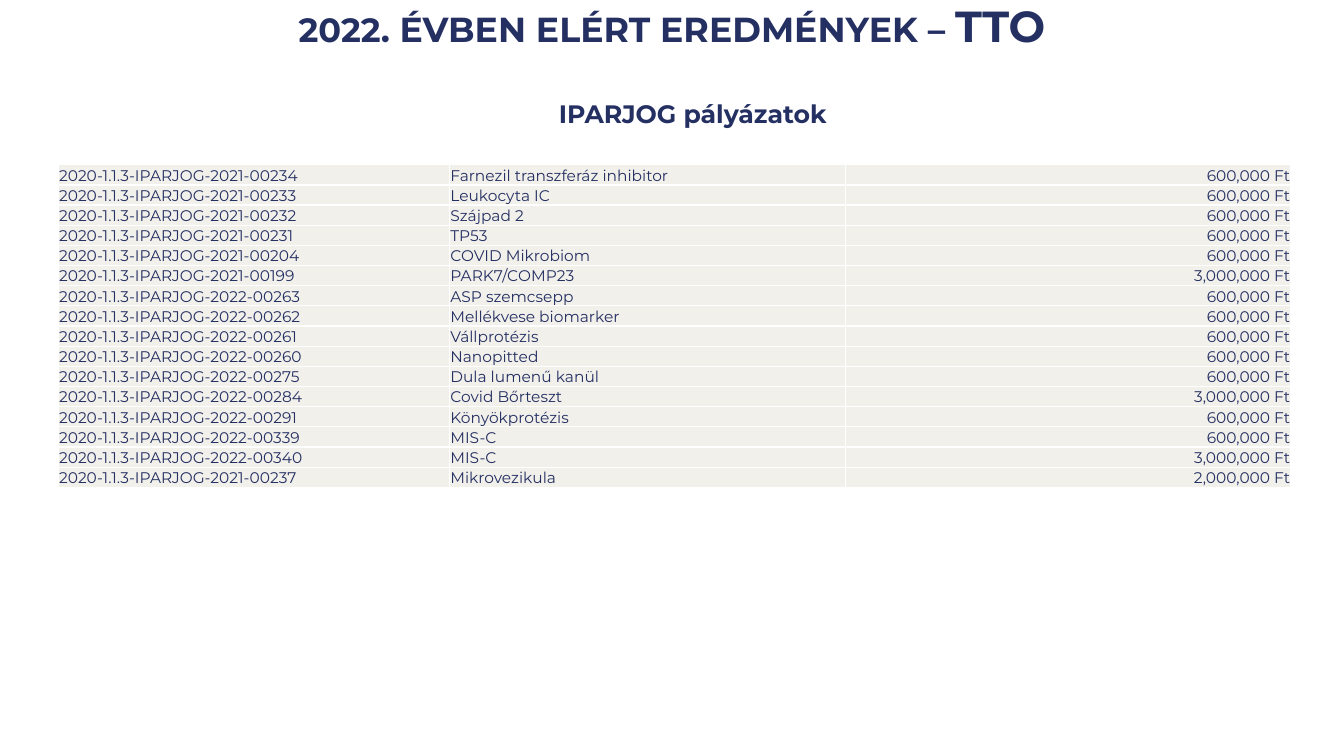
from dataclasses import dataclass

from lxml import etree
from pptx import Presentation
from pptx.dml.color import RGBColor
from pptx.enum.text import MSO_ANCHOR, MSO_AUTO_SIZE, PP_ALIGN
from pptx.oxml.ns import qn
from pptx.util import Pt

LEFT, CENTER, RIGHT = PP_ALIGN.LEFT, PP_ALIGN.CENTER, PP_ALIGN.RIGHT
BOTTOM = MSO_ANCHOR.BOTTOM
GROW = MSO_AUTO_SIZE.SHAPE_TO_FIT_TEXT
BLANK_LAYOUT = 6


@dataclass(frozen=True)
class Theme:
    font: str = "Montserrat"
    text: str = "242F62"
    cell: str = "F2F0EB"
    border: str = "FFFFFF"
    year_size: int = 30
    title_size: int = 31
    subtitle_size: int = 18
    table_size: int = 11
    border_width: int = 1


GRANTS = [
    ("2021-00234", "Farnezil transzferáz inhibitor", 600_000),
    ("2021-00233", "Leukocyta IC", 600_000),
    ("2021-00232", "Szájpad 2", 600_000),
    ("2021-00231", "TP53", 600_000),
    ("2021-00204", "COVID Mikrobiom", 600_000),
    ("2021-00199", "PARK7/COMP23", 3_000_000),
    ("2022-00263", "ASP szemcsepp", 600_000),
    ("2022-00262", "Mellékvese biomarker", 600_000),
    ("2022-00261", "Vállprotézis", 600_000),
    ("2022-00260", "Nanopitted", 600_000),
    ("2022-00275", "Dula lumenű kanül", 600_000),
    ("2022-00284", "Covid Bőrteszt", 3_000_000),
    ("2022-00291", "Könyökprotézis", 600_000),
    ("2022-00339", "MIS-C", 600_000),
    ("2022-00340", "MIS-C", 3_000_000),
    ("2021-00237", "Mikrovezikula", 2_000_000),
]


class SlideBuilder:
    def __init__(self, slide, theme):
        self.slide = slide
        self.theme = theme

    def style_run(self, run, size, bold=False):
        run.font.name = self.theme.font
        run.font.size = Pt(size)
        run.font.bold = bold
        run.font.color.rgb = RGBColor.from_string(self.theme.text)

    def heading(self, left, top, width, height, parts, wrap=True, small_caps=False):
        """Add a centred bold line made of (text, size) parts."""
        box = self.slide.shapes.add_textbox(Pt(left), Pt(top), Pt(width), Pt(height))
        box.text_frame.word_wrap = wrap
        paragraph = box.text_frame.paragraphs[0]
        paragraph.alignment = CENTER
        for text, size in parts:
            run = paragraph.add_run()
            run.text = text
            self.style_run(run, size, bold=True)
            if small_caps:
                run.font._element.set("cap", "small")
        return box

    def cell_borders(self, cell):
        properties = cell._tc.get_or_add_tcPr()
        for side in ("a:lnL", "a:lnR", "a:lnT", "a:lnB"):
            line = etree.SubElement(properties, qn(side), w=str(Pt(self.theme.border_width)))
            fill = etree.SubElement(line, qn("a:solidFill"))
            etree.SubElement(fill, qn("a:srgbClr"), val=self.theme.border)

    def table(self, left, top, column_widths, row_height, rows, alignments):
        frame = self.slide.shapes.add_table(
            len(rows), len(column_widths), Pt(left), Pt(top),
            Pt(sum(column_widths)), Pt(row_height * len(rows)))
        table = frame.table
        table.first_row = table.horz_banding = False
        for column, width in zip(table.columns, column_widths):
            column.width = Pt(width)
        for row, values in zip(table.rows, rows):
            row.height = Pt(row_height)
            for cell, value, alignment in zip(row.cells, values, alignments):
                self.table_cell(cell, value, alignment)

    def table_cell(self, cell, value, alignment):
        cell.margin_left = cell.margin_right = cell.margin_top = Pt(0.5)
        cell.margin_bottom = Pt(0)
        cell.vertical_anchor = BOTTOM
        self.cell_borders(cell)
        cell.fill.solid()
        cell.fill.fore_color.rgb = RGBColor.from_string(self.theme.cell)
        paragraph = cell.text_frame.paragraphs[0]
        paragraph.text = value
        paragraph.alignment = alignment
        self.style_run(paragraph.runs[0], self.theme.table_size)


def main():
    presentation = Presentation()
    presentation.slide_width, presentation.slide_height = Pt(960), Pt(540)
    theme = Theme()
    slide = presentation.slides.add_slide(presentation.slide_layouts[BLANK_LAYOUT])
    builder = SlideBuilder(slide, theme)

    # Title and subtitle
    title = builder.heading(
        0, 0, 960, 39,
        [("2022", theme.year_size), (". évben elért eredmények – TTO", theme.title_size)],
        small_caps=True)
    title.text_frame.paragraphs[0].line_spacing = 0.9
    subtitle = builder.heading(
        390, 66.4, 210, 29, [("IPARJOG pályázatok", theme.subtitle_size)], wrap=False)
    subtitle.text_frame.auto_size = GROW

    # Grants: identifier, project and amount
    rows = [(f"2020-1.1.3-IPARJOG-{number}", project, f"{amount:,} Ft")
            for number, project, amount in GRANTS]
    builder.table(41.7, 117.7, (279.5, 283, 318), 14.4, rows, (LEFT, LEFT, RIGHT))

    presentation.save("out.pptx")


if __name__ == "__main__":
    main()
